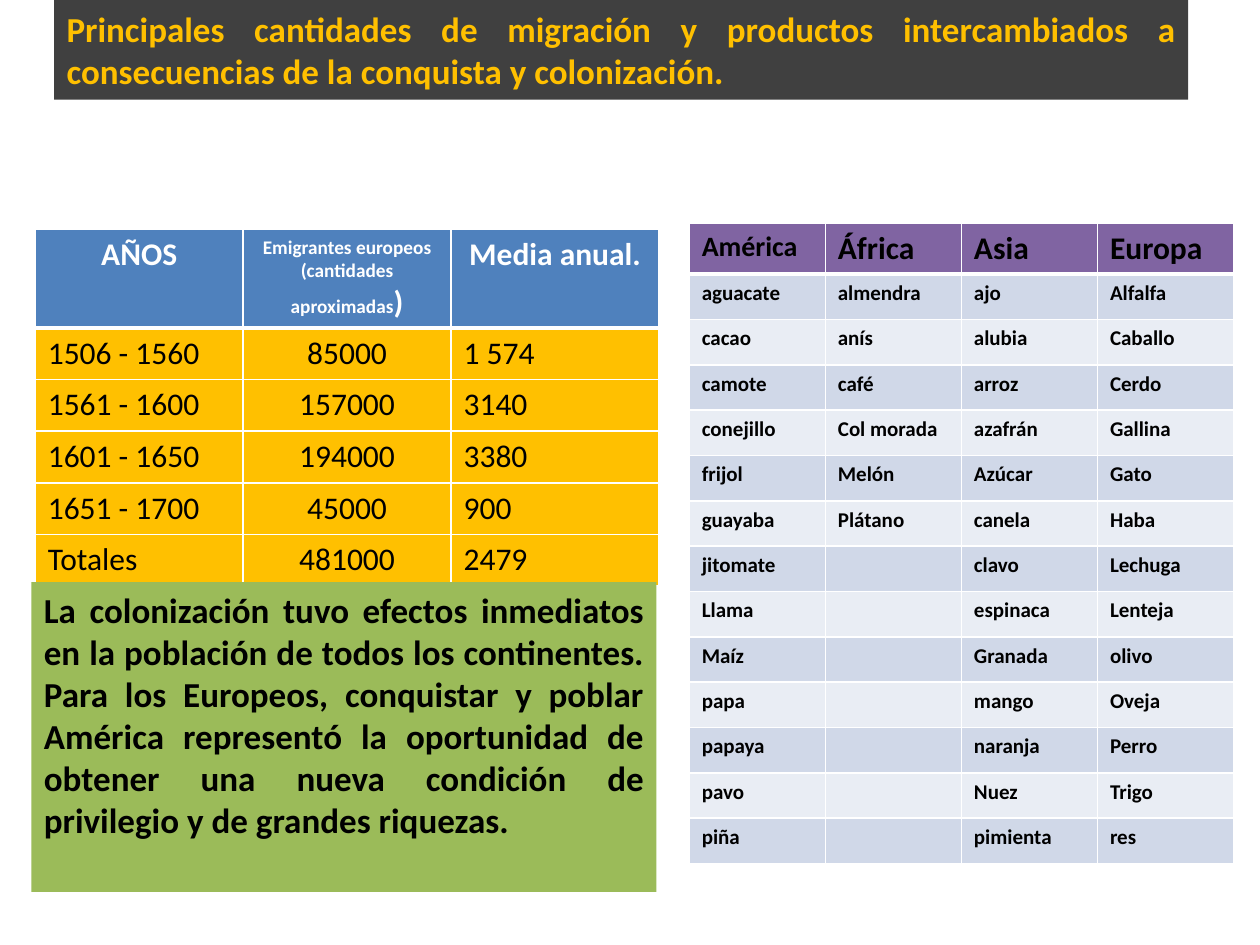
from itertools import zip_longest

from lxml.etree import SubElement
from pptx import Presentation
from pptx.dml.color import RGBColor
from pptx.enum.shapes import MSO_SHAPE
from pptx.enum.text import MSO_ANCHOR, PP_ALIGN
from pptx.oxml import parse_xml
from pptx.oxml.ns import nsdecls, qn
from pptx.util import Inches, Pt

# Content
TITLE = ("Principales cantidades de migración y productos intercambiados "
         "a consecuencias de la conquista y colonización.")
SUMMARY = ("La colonización tuvo efectos inmediatos en la población de todos los "
           "continentes. Para los Europeos, conquistar y poblar América representó "
           "la oportunidad de obtener una nueva condición de privilegio y de "
           "grandes riquezas.")
# A header is a list of (text, size) pieces
MIGRATION_HEADERS = [
    [("AÑOS", 18)],
    [("Emigrantes europeos (cantidades aproximadas", 11), (")", 18)],
    [("Media anual.", 18)],
]
MIGRATION_ROWS = [
    ("1506 - 1560", "85000", "1 574"),
    ("1561 - 1600", "157000", "3140"),
    ("1601 - 1650", "194000", "3380"),
    ("1651 - 1700", "45000", "900"),
    ("Totales", "481000", "2479"),
]
PRODUCT_HEADERS = [[("América", 16)], [("África", 18)], [("Asia", 18)], [("Europa", 18)]]
PRODUCTS = [
    ["aguacate", "cacao", "camote", "conejillo", "frijol", "guayaba", "jitomate",
     "Llama", "Maíz", "papa", "papaya", "pavo", "piña"],
    ["almendra", "anís", "café", "Col morada", "Melón", "Plátano"],
    ["ajo", "alubia", "arroz", "azafrán", "Azúcar", "canela", "clavo",
     "espinaca", "Granada", "mango", "naranja", "Nuez", "pimienta"],
    ["Alfalfa", "Caballo", "Cerdo", "Gallina", "Gato", "Haba", "Lechuga",
     "Lenteja", "olivo", "Oveja", "Perro", "Trigo", "res"],
]

THEME = {
    "font": "Calibri",
    "white": "FFFFFF", "black": "000000", "gold": "FFC000", "dark": "404040",
    "blue": "4F81BD", "purple": "8064A2", "green": "9BBB59",
    "bands": ("D0D8E8", "E9EDF4"),
    "prose": 20, "figures": 18, "products": 12,
}
LEFT, CENTER = PP_ALIGN.LEFT, PP_ALIGN.CENTER


def style_run(run, size, color, bold):
    run.font.name = THEME["font"]
    run.font.size = Pt(size)
    run.font.bold = bold
    run.font.color.rgb = RGBColor.from_string(color)


def add_panel(slide, box, text, fill, color, anchor):
    panel = slide.shapes.add_shape(MSO_SHAPE.RECTANGLE, *map(Inches, box))
    panel.shadow.inherit = False
    panel.fill.solid()
    panel.fill.fore_color.rgb = RGBColor.from_string(fill)
    panel.line.fill.background()
    frame = panel.text_frame
    frame.word_wrap = True
    frame.vertical_anchor = anchor
    frame.text = text
    frame.paragraphs[0].alignment = PP_ALIGN.JUSTIFY
    style_run(frame.paragraphs[0].runs[0], THEME["prose"], color, True)


def set_borders(cell, top, bottom):
    properties = cell._tc.get_or_add_tcPr()
    widths = {"lnL": 1, "lnR": 1, "lnT": top, "lnB": bottom}
    for position, (side, width) in enumerate(widths.items()):
        properties.insert(position, parse_xml(
            f'<a:{side} {nsdecls("a")} w="{Pt(width)}"><a:solidFill>'
            f'<a:srgbClr val="{THEME["white"]}"/></a:solidFill></a:{side}>'))


def fill_cell(cell, pieces, fill, color, bold, alignment):
    cell.fill.solid()
    cell.fill.fore_color.rgb = RGBColor.from_string(fill)
    paragraph = cell.text_frame.paragraphs[0]
    paragraph.alignment = alignment
    for text, size in pieces:
        if text:
            run = paragraph.add_run()
            run.text = text
            style_run(run, size, color, bold)
        else:  # keeps an empty cell as low as its row
            SubElement(paragraph._p, qn("a:endParaRPr"), sz=str(size * 100))


def add_grid(slide, corner, column_width, header_height, row_height, headers, rows,
             header_style, body_size, body_bold, fills, alignments):
    width = column_width * len(headers)
    height = header_height + row_height * len(rows)
    grid = slide.shapes.add_table(
        len(rows) + 1, len(headers), *map(Inches, (*corner, width, height))).table
    for column in grid.columns:
        column.width = Inches(column_width)
    for number, row in enumerate(grid.rows):
        row.height = Inches(row_height if number else header_height)

    header_fill, header_color, header_alignment = header_style
    for column, pieces in enumerate(headers):
        cell = grid.cell(0, column)
        fill_cell(cell, pieces, header_fill, header_color, True, header_alignment)
        set_borders(cell, 1, 3)
    for number, values in enumerate(rows):
        for column, value in enumerate(values):
            cell = grid.cell(number + 1, column)
            fill_cell(cell, [(value, body_size)], fills[number % len(fills)],
                      THEME["black"], body_bold, alignments[column])
            set_borders(cell, 1 if number else 3, 1)


def main():
    deck = Presentation()
    deck.slide_width, deck.slide_height = Inches(10), Inches(7.5)
    slide = deck.slides.add_slide(deck.slide_layouts[6])

    # Title band
    add_panel(slide, (0.43, 0, 9, 0.79), TITLE, THEME["dark"], THEME["gold"],
              MSO_ANCHOR.MIDDLE)
    # Migration figures
    add_grid(slide, (0.28, 1.82), 1.65, 0.77, 0.41, MIGRATION_HEADERS, MIGRATION_ROWS,
             (THEME["blue"], THEME["white"], CENTER), THEME["figures"], False,
             (THEME["gold"],), (LEFT, CENTER, LEFT))
    # Products by continent
    add_grid(slide, (5.47, 1.77), 1.08, 0.39, 0.36, PRODUCT_HEADERS,
             list(zip_longest(*PRODUCTS, fillvalue="")),
             (THEME["purple"], THEME["black"], LEFT), THEME["products"], True,
             THEME["bands"], (LEFT,) * len(PRODUCTS))
    # Summary below the figures
    add_panel(slide, (0.25, 4.62, 4.96, 2.46), SUMMARY, THEME["green"], THEME["black"],
              MSO_ANCHOR.TOP)

    deck.save("out.pptx")


if __name__ == "__main__":
    main()
